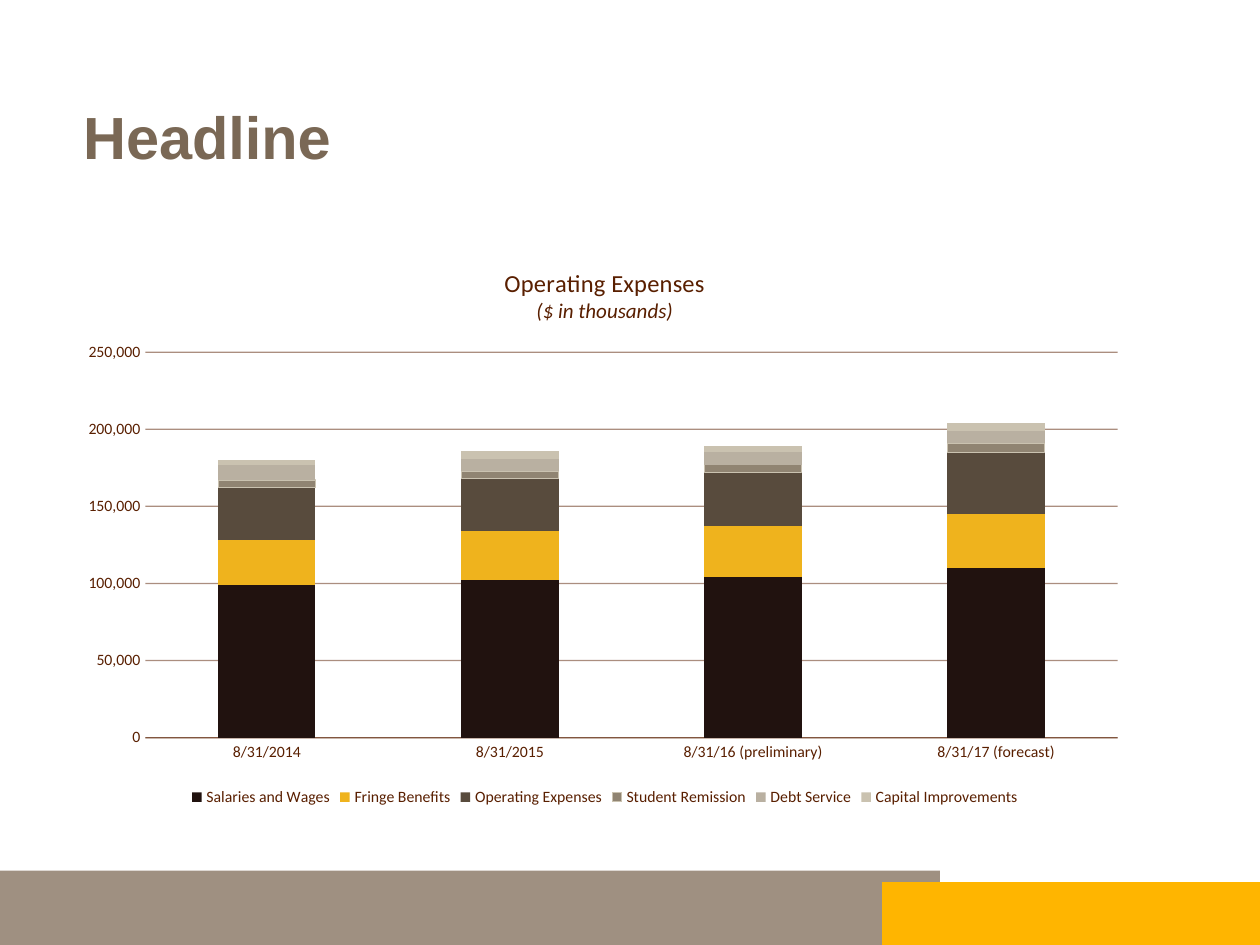
"""Build a slide with a stacked column chart of operating expenses."""
from lxml import etree
from pptx import Presentation
from pptx import util as u
from pptx.chart import data
from pptx.dml import color
from pptx.enum import chart as ch, shapes, text
from pptx.oxml import ns

THEME = {
    "headline": "7A6855", "band": "9F9081", "accent": "FFB500", "ink": "591F00",
    "sans": "Arial", "body": "Calibri",
    "headline_pt": 34, "title_pt": 14, "subtitle_pt": 12, "label_pt": 9,
}
CATEGORIES = ["8/31/2014", "8/31/2015", "8/31/16 (preliminary)", "8/31/17 (forecast)"]
SERIES = {
    "Salaries and Wages": ("21120F", [99000, 102000, 104000, 110000]),
    "Fringe Benefits": ("EFB31D", [29000, 32000, 33000, 35000]),
    "Operating Expenses": ("584B3D", [34000, 34000, 35000, 40000]),
    "Student Remission": ("908472", [5000, 5000, 5000, 6000]),
    "Debt Service": ("B9B0A1", [10000, 8000, 8000, 8000]),
    "Capital Improvements": ("CAC2B0", [3000, 5000, 4000, 5000]),
}
PLOT = {"x": 0.07, "y": 0.19, "w": 0.91, "h": 0.68}


def style_font(font, size, rgb=THEME["ink"], **values):
    font.size = u.Pt(size)
    font.color.rgb = color.RGBColor.from_string(rgb)
    for name, value in {"name": THEME["body"], "bold": False, **values}.items():
        setattr(font, name, value)


def style_line(line, rgb, alpha=100):
    line.width = u.Pt(0.75)
    line.color.rgb = color.RGBColor.from_string(rgb)
    clr = line.fill._xPr.find(".//" + ns.qn("a:srgbClr"))
    etree.SubElement(clr, ns.qn("a:alpha"), val=str(alpha * 1000))


prs = Presentation()
prs.slide_width, prs.slide_height = u.Inches(10), u.Inches(7.5)
s = prs.slides.add_slide(prs.slide_layouts[5])

band = s.shapes.add_shape(shapes.MSO_SHAPE.RECTANGLE, u.Inches(0), u.Inches(6.91),
                          u.Inches(7.46), u.Inches(0.6))
fb = s.shapes.build_freeform(7.38, 6.65, scale=u.Inches(1))
fb.add_line_segments([(10, 6.65), (10, 7.5), (6.76, 7.5)], close=True)
wedge = fb.convert_to_shape()
for sp, key in ((band, "band"), (wedge, "accent")):
    sp.shadow.inherit = False
    sp.fill.solid()
    sp.fill.fore_color.rgb = color.RGBColor.from_string(THEME[key])
    sp.line.fill.background()

cd = data.CategoryChartData(number_format="#,##0")
cd.categories = CATEGORIES
for name, (rgb, values) in SERIES.items():
    cd.add_series(name, values)
chart = s.shapes.add_chart(ch.XL_CHART_TYPE.COLUMN_STACKED, u.Inches(0.56), u.Inches(1.94),
                           u.Inches(8.48), u.Inches(4.5), cd).chart
style_font(chart.font, THEME["label_pt"])

plot = chart.plots[0]
for name, value in {"gap_width": 150, "overlap": 100, "vary_by_categories": False}.items():
    setattr(plot, name, value)
for series in plot.series:
    series.format.fill.solid()
    series.format.fill.fore_color.rgb = color.RGBColor.from_string(SERIES[series.name][0])
    if series.name == "Student Remission":
        style_line(series.format.line, SERIES["Capital Improvements"][0])
    else:
        series.format.line.fill.background()

cat, val = chart.category_axis, chart.value_axis
for axis in (cat, val):
    axis.major_tick_mark = axis.minor_tick_mark = ch.XL_TICK_MARK.NONE
    style_font(axis.tick_labels.font, THEME["label_pt"])
style_line(cat.format.line, THEME["ink"], 50)
val.format.line.fill.background()
for name, value in {"minimum_scale": 0, "maximum_scale": 250000, "major_unit": 50000,
                    "has_major_gridlines": True}.items():
    setattr(val, name, value)
style_line(val.major_gridlines.format.line, THEME["ink"], 50)
val.tick_labels.number_format = "#,##0"
val.tick_labels.number_format_is_linked = False

chart.has_legend = True
chart.legend.position = ch.XL_LEGEND_POSITION.BOTTOM
chart.legend.include_in_layout = False
style_font(chart.legend.font, THEME["label_pt"])

chart.has_title = True
tf = chart.chart_title.text_frame
for i, (line, size, italic) in enumerate([("Operating Expenses", THEME["title_pt"], False),
                                          ("($ in thousands)", THEME["subtitle_pt"], True)]):
    p = tf.add_paragraph() if i else tf.paragraphs[0]
    r = p.add_run()
    r.text = line
    style_font(r.font, size, italic=italic)

area = chart._chartSpace.find(".//" + ns.qn("c:plotArea"))
for old in area.findall(ns.qn("c:layout")):
    area.remove(old)
layout = etree.Element(ns.qn("c:layout"))
manual = etree.SubElement(layout, ns.qn("c:manualLayout"))
for tag, value in {"layoutTarget": "inner", "xMode": "edge", "yMode": "edge", **PLOT}.items():
    etree.SubElement(manual, ns.qn("c:" + tag), val=str(value))
area.insert(0, layout)

title = s.shapes.title
for name, value in {"left": 0.56, "top": 0.81, "width": 9, "height": 0.79}.items():
    setattr(title, name, u.Inches(value))
tf = title.text_frame
for name, value in {"vertical_anchor": text.MSO_ANCHOR.TOP, "word_wrap": True,
                    "auto_size": text.MSO_AUTO_SIZE.NONE}.items():
    setattr(tf, name, value)
p = tf.paragraphs[0]
p.alignment, p.line_spacing = text.PP_ALIGN.LEFT, 0.9
r = p.add_run()
r.text = "Headline"
style_font(r.font, THEME["headline_pt"], THEME["headline"], name=THEME["sans"], bold=True)

prs.save("out.pptx")
